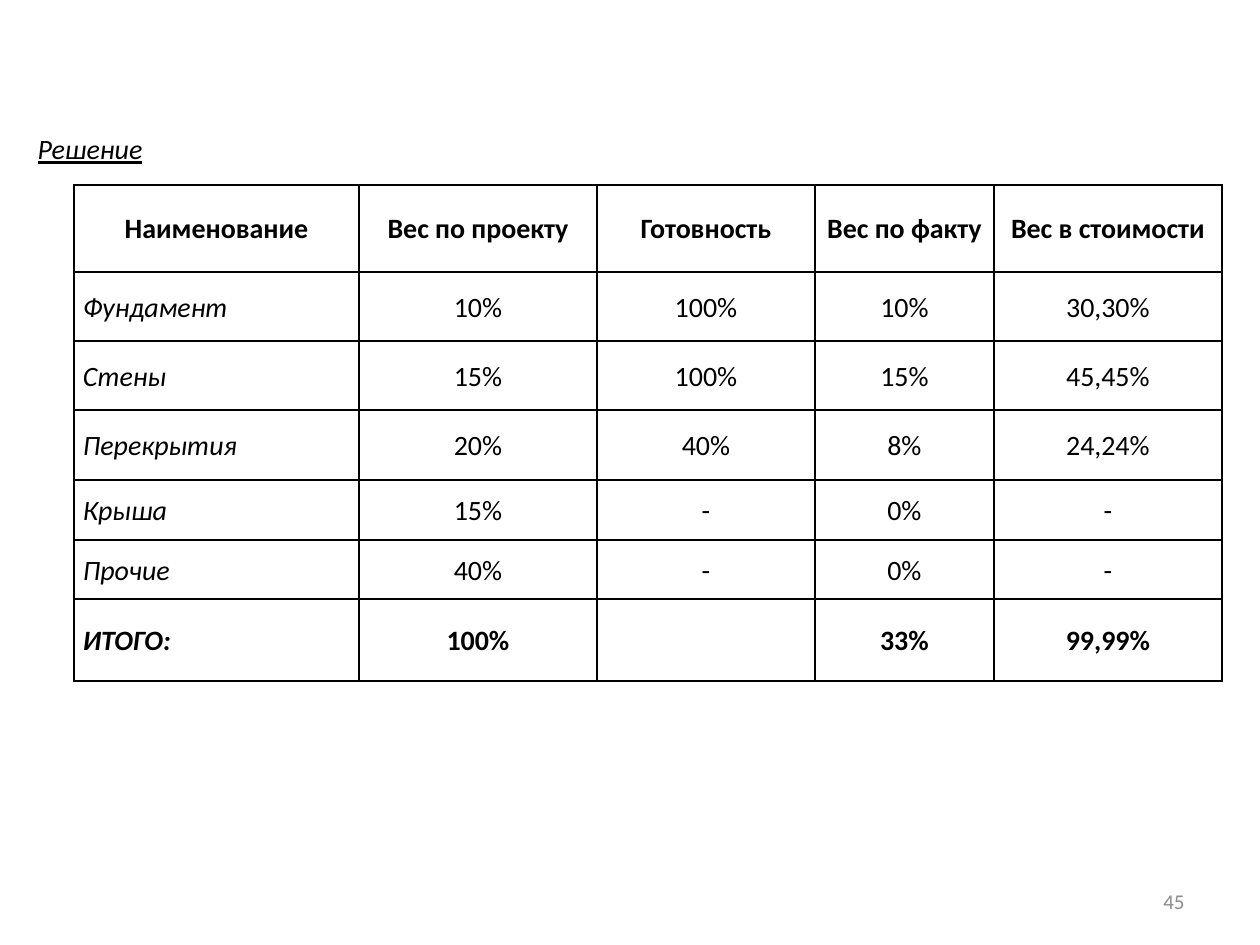
from dataclasses import dataclass

from lxml import etree
from pptx import Presentation
from pptx.dml.color import RGBColor
from pptx.enum.text import MSO_ANCHOR, PP_ALIGN
from pptx.oxml.ns import qn
from pptx.util import Emu, Pt

LEFT, CENTER, RIGHT = PP_ALIGN.LEFT, PP_ALIGN.CENTER, PP_ALIGN.RIGHT
TOP, MIDDLE = MSO_ANCHOR.TOP, MSO_ANCHOR.MIDDLE
PX_PER_INCH = 126
BORDER_SIDES = ("a:lnL", "a:lnR", "a:lnT", "a:lnB")

HEADERS = ["Наименование", "Вес по проекту", "Готовность", "Вес по факту", "Вес в стоимости"]
WORKS = [
    ["Фундамент", "10%", "100%", "10%", "30,30%"],
    ["Стены", "15%", "100%", "15%", "45,45%"],
    ["Перекрытия", "20%", "40%", "8%", "24,24%"],
    ["Крыша", "15%", "-", "0%", "-"],
    ["Прочие", "40%", "-", "0%", "-"],
]
TOTAL = ["ИТОГО:", "100%", "", "33%", "99,99%"]
COLUMN_WIDTHS = [285, 238, 218, 179, 228]
ROW_HEIGHTS = [87, 69, 69, 70, 60, 59, 82]


@dataclass(frozen=True)
class Theme:
    font: str = "Calibri"
    ink: str = "000000"
    paper: str = "FFFFFF"
    muted: str = "8C8C8C"
    body_size: int = 16
    number_size: int = 12
    border_width: int = 1
    line_spacing: float = 1.07
    cell_margin: int = 9


def px(length):
    return Emu(round(length * 914400 / PX_PER_INCH))


def write(frame, text, *, font, size, color, bold=False, italic=False,
          underline=False, align=LEFT, spacing=None):
    paragraph = frame.paragraphs[0]
    paragraph.alignment = align
    paragraph.space_before = Pt(0)
    if spacing:
        paragraph.line_spacing = spacing
    run = paragraph.add_run()
    run.text = text
    run.font.name = font
    run.font.size = Pt(size)
    run.font.color.rgb = RGBColor.from_string(color)
    run.font.bold = bold
    run.font.italic = italic
    run.font.underline = underline


class SlideBuilder:
    def __init__(self, slide, theme):
        self.slide = slide
        self.theme = theme

    def body(self, text, left, top, width, height):
        heading = self.slide.placeholders[1]
        heading.left, heading.top = px(left), px(top)
        heading.width, heading.height = px(width), px(height)
        frame = heading.text_frame
        frame.vertical_anchor = TOP
        properties = frame.paragraphs[0]._p.get_or_add_pPr()
        properties.set("marL", "0")
        properties.set("indent", "0")
        etree.SubElement(properties, qn("a:buNone"))
        write(frame, text, font=self.theme.font, size=self.theme.body_size,
              color=self.theme.ink, italic=True, underline=True)

    def page_number(self, text, left, top, width, height):
        number = self.slide.shapes.add_textbox(px(left), px(top), px(width), px(height))
        frame = number.text_frame
        frame.word_wrap = True
        frame.vertical_anchor = MIDDLE
        write(frame, text, font=self.theme.font, size=self.theme.number_size,
              color=self.theme.muted, align=RIGHT)

    def table(self, rows, left, top, widths, heights):
        table = self.slide.shapes.add_table(
            len(rows), len(widths), px(left), px(top), px(sum(widths)), px(sum(heights))
        ).table
        table.first_row = table.horz_banding = False
        for column, width in zip(table.columns, widths):
            column.width = px(width)
        for row, height in zip(table.rows, heights):
            row.height = px(height)
        for r, values in enumerate(rows):
            header, total = r == 0, r == len(rows) - 1
            for c, value in enumerate(values):
                label = c == 0 and not header
                cell = table.cell(r, c)
                self.style_cell(cell)
                if value:
                    write(cell.text_frame, value, font=self.theme.font,
                          size=self.theme.body_size, color=self.theme.ink,
                          bold=header or total, italic=label,
                          align=LEFT if label else CENTER,
                          spacing=None if header else self.theme.line_spacing)

    def style_cell(self, cell):
        cell.vertical_anchor = MIDDLE
        cell.margin_left = cell.margin_right = px(self.theme.cell_margin)
        cell.margin_top = cell.margin_bottom = 0
        properties = cell._tc.get_or_add_tcPr()
        for side in BORDER_SIDES:
            line = etree.SubElement(properties, qn(side), w=str(Pt(self.theme.border_width)))
            fill = etree.SubElement(line, qn("a:solidFill"))
            etree.SubElement(fill, qn("a:srgbClr"), val=self.theme.ink)
        cell.fill.solid()
        cell.fill.fore_color.rgb = RGBColor.from_string(self.theme.paper)


def main():
    presentation = Presentation()
    presentation.slide_width, presentation.slide_height = px(1260), px(945)
    slide = presentation.slides.add_slide(presentation.slide_layouts[1])
    unused_title = slide.shapes.title.element
    unused_title.getparent().remove(unused_title)
    builder = SlideBuilder(slide, Theme())
    builder.body("Решение", 25, 125, 1211, 745)
    builder.page_number("45", 903, 876, 294, 50)
    builder.table([HEADERS, *WORKS, TOTAL], 74, 185, COLUMN_WIDTHS, ROW_HEIGHTS)
    presentation.save("out.pptx")


if __name__ == "__main__":
    main()
